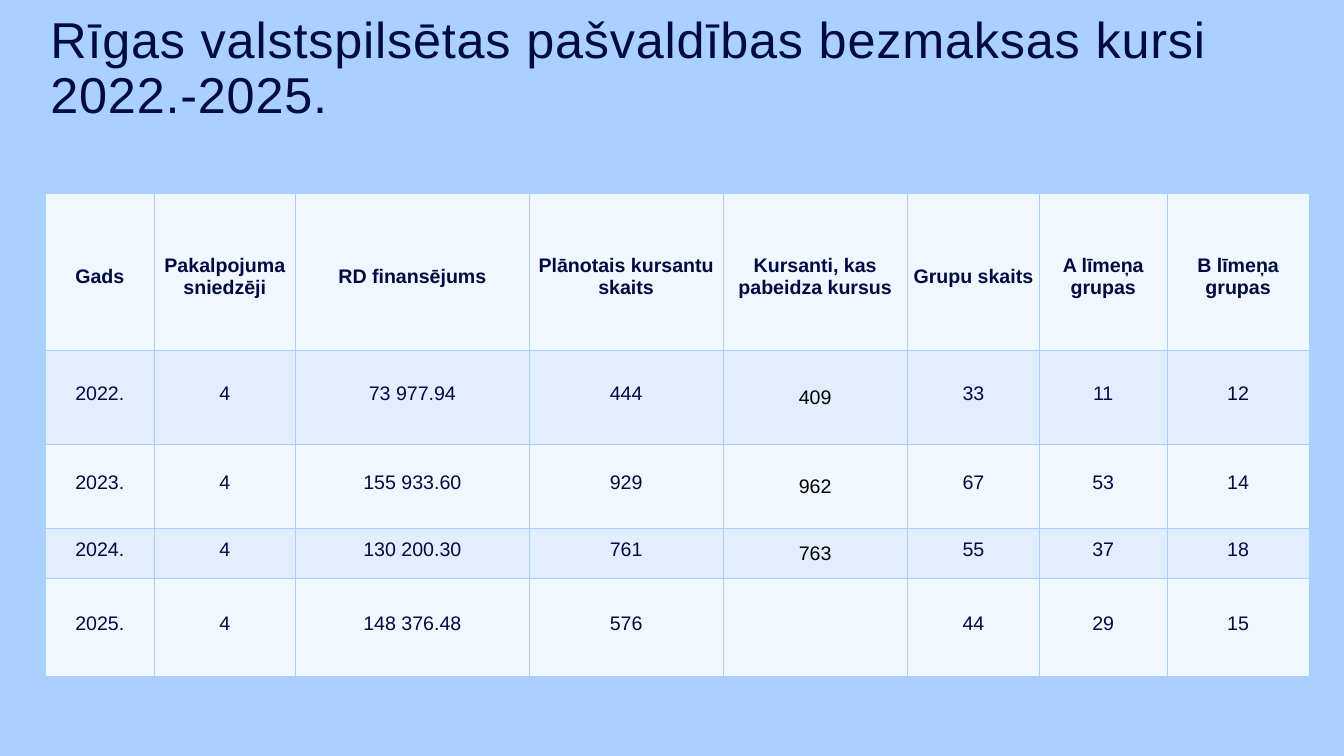
from lxml import etree
from pptx import Presentation
from pptx.dml.color import RGBColor
from pptx.enum.text import MSO_ANCHOR, MSO_AUTO_SIZE, PP_ALIGN
from pptx.oxml.ns import qn
from pptx.util import Inches, Pt

TOP, MIDDLE = MSO_ANCHOR.TOP, MSO_ANCHOR.MIDDLE
LEFT, CENTER = PP_ALIGN.LEFT, PP_ALIGN.CENTER
NO_AUTOFIT = MSO_AUTO_SIZE.NONE
TITLE_ONLY = 5

SKY, NAVY, BLACK = "AAD0FF", "000B40", "000000"
BANDS = ("F1F7FF", "E2EEFF")
FONT = "Arial"

TITLE = "Rīgas valstspilsētas pašvaldības bezmaksas kursi 2022.-2025."
COURSES = [
    ["Gads", "Pakalpojuma sniedzēji", "RD finansējums", "Plānotais kursantu skaits",
     "Kursanti, kas pabeidza kursus", "Grupu skaits", "A līmeņa grupas", "B līmeņa grupas"],
    ["2022.", "4", "73 977.94", "444", "409", "33", "11", "12"],
    ["2023.", "4", "155 933.60", "929", "962", "67", "53", "14"],
    ["2024.", "4", "130 200.30", "761", "763", "55", "37", "18"],
    ["2025.", "4", "148 376.48", "576", "", "44", "29", "15"],
]
GRADUATES = 4
COLUMN_SHARES = [2.16, 2.8, 4.64, 3.84, 3.66, 2.62, 2.53, 2.82]
ROW_SHARES = [3.12, 1.86, 1.67, 0.99, 1.94]


def color(hex_string):
    return RGBColor.from_string(hex_string)


def set_font(paragraph, size, hex_string, bold=False):
    font = paragraph.font
    font.name, font.size, font.bold = FONT, Pt(size), bold
    font.color.rgb = color(hex_string)


def add_title(slide, left, top, width, height):
    title = slide.shapes.title
    title.left, title.top, title.width, title.height = left, top, width, height
    frame = title.text_frame
    frame.text = TITLE
    frame.word_wrap = True
    frame.auto_size = NO_AUTOFIT
    frame.vertical_anchor = TOP
    heading = frame.paragraphs[0]
    heading.alignment, heading.line_spacing = LEFT, 0.9
    set_font(heading, 72, NAVY)
    heading.runs[0].font._element.set("spc", "120")


def add_borders(cell):
    """Draw a thin line on all four sides, ahead of the cell's fill."""
    properties = cell._tc.get_or_add_tcPr()
    for index, side in enumerate(("a:lnL", "a:lnR", "a:lnT", "a:lnB")):
        line = etree.Element(qn(side), w=str(Pt(1)))
        fill = etree.SubElement(line, qn("a:solidFill"))
        etree.SubElement(fill, qn("a:srgbClr"), val=SKY)
        properties.insert(index, line)


def fill_cell(cell, text, row, column):
    header, graduates = row == 0, column == GRADUATES
    cell.fill.solid()
    cell.fill.fore_color.rgb = color(BANDS[row % 2])
    add_borders(cell)
    cell.vertical_anchor = MIDDLE
    cell.margin_left = cell.margin_right = Inches(0.01)
    cell.margin_top = Inches(0.17 if header else 0.01)
    cell.margin_bottom = Inches(0 if header or graduates else 0.14)
    cell.text = text
    paragraph = cell.text_frame.paragraphs[0]
    paragraph.alignment = CENTER
    set_font(paragraph, 28, BLACK if graduates and not header else NAVY, header)


def add_courses_table(slide, left, top, width, height):
    table = slide.shapes.add_table(
        len(COURSES), len(COLUMN_SHARES), left, top, width, height).table
    for column, share in zip(table.columns, COLUMN_SHARES):
        column.width = int(width * share / sum(COLUMN_SHARES))
    for row, share in zip(table.rows, ROW_SHARES):
        row.height = int(height * share / sum(ROW_SHARES))
    for r, values in enumerate(COURSES):
        for c, text in enumerate(values):
            fill_cell(table.cell(r, c), text, r, c)


def main():
    deck = Presentation()
    deck.slide_width, deck.slide_height = Inches(26.67), Inches(15)
    slide = deck.slides.add_slide(deck.slide_layouts[TITLE_ONLY])
    slide.background.fill.solid()
    slide.background.fill.fore_color.rgb = color(SKY)
    left, width = Inches(0.9), Inches(25.08)
    title_top, title_height = Inches(0.25), Inches(3.59)
    add_title(slide, left, title_top, width, title_height)
    add_courses_table(slide, left, title_top + title_height, width, Inches(9.57))
    deck.save("out.pptx")


if __name__ == "__main__":
    main()
